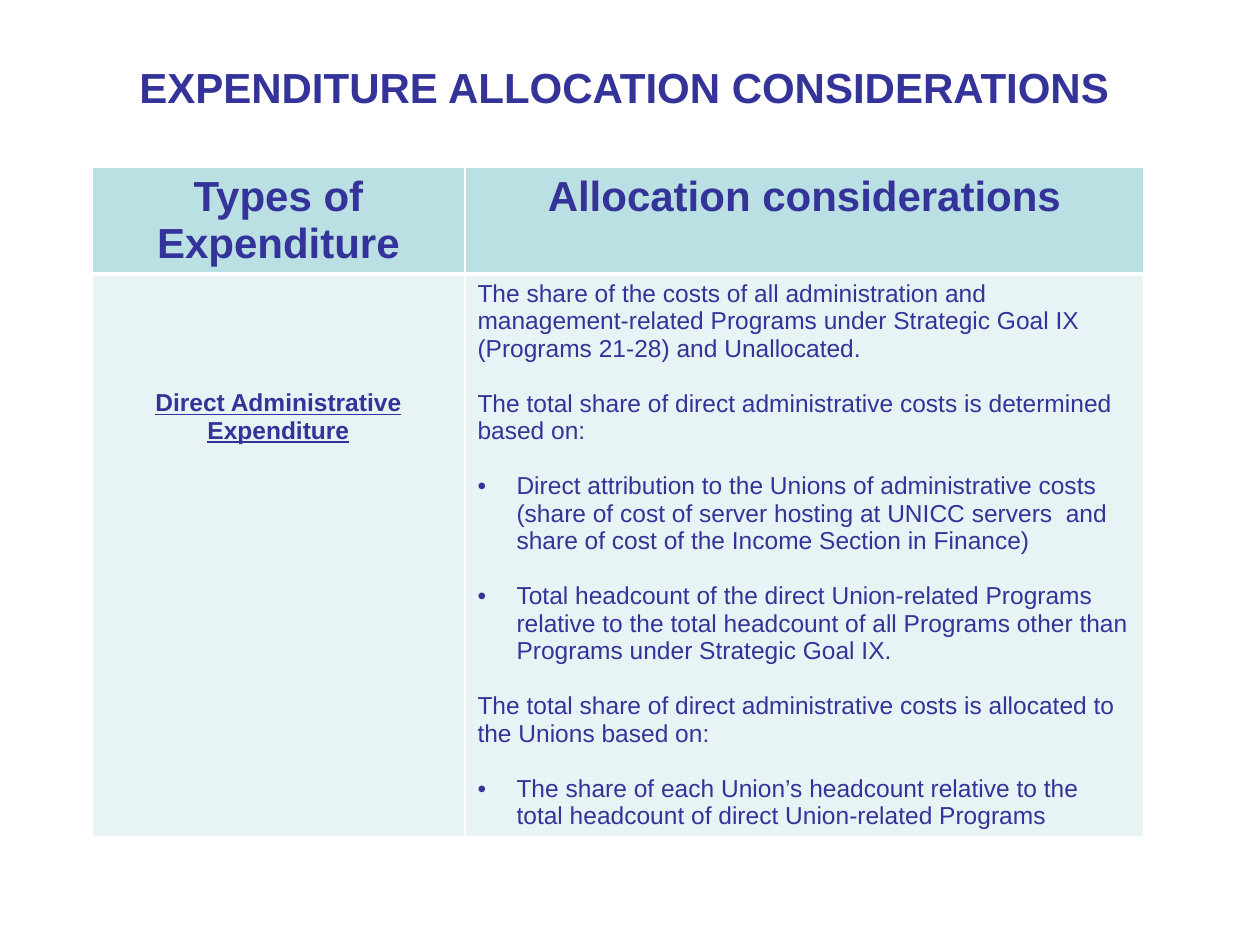
from lxml.etree import SubElement
from pptx import Presentation
from pptx.dml.color import RGBColor
from pptx.enum.text import MSO_ANCHOR, PP_ALIGN
from pptx.oxml.ns import qn
from pptx.util import Inches, Pt

INDIGO = RGBColor(0x33, 0x33, 0x99)
HEADER_TEAL = RGBColor(0xBB, 0xE0, 0xE3)
BODY_TEAL = RGBColor(0xE7, 0xF3, 0xF4)
WHITE = RGBColor(0xFF, 0xFF, 0xFF)

FONT = "Arial"
HEADING_SIZE = 24
BODY_SIZE = 14
BLANK_LINE = 15.64  # points, one line of body text
HANGING_INDENT = Inches(0.31)

HEADINGS = ["Types of Expenditure", "Allocation considerations"]
EXPENDITURE_TYPE = "Direct Administrative Expenditure"
# Each entry is (text, is_bullet).
CONSIDERATIONS = [
    ("The share of the costs of all administration and management-related Programs "
     "under Strategic Goal IX (Programs 21-28) and Unallocated.", False),
    ("The total share of direct administrative costs is determined based on:", False),
    ("Direct attribution to the Unions of administrative costs (share of cost of server "
     "hosting at UNICC servers  and share of cost of the Income Section in Finance)", True),
    ("Total headcount of the direct Union-related Programs relative to the total "
     "headcount of all Programs other than Programs under Strategic Goal IX.", True),
    ("The total share of direct administrative costs is allocated to the Unions "
     "based on:", False),
    ("The share of each Union’s headcount relative to the total headcount of direct "
     "Union-related Programs", True),
]


class AllocationSlide:
    def __init__(self, deck):
        self.page = deck.slides.add_slide(deck.slide_layouts[5])

    def style(self, para, size, bold=False, underline=False, align=PP_ALIGN.LEFT):
        para.alignment = align
        font = para.font
        font.name, font.size = FONT, Pt(size)
        font.bold, font.underline = bold, underline
        font.color.rgb = INDIGO

    def title(self, text, left, top, width, height):
        box = self.page.shapes.title
        box.left, box.top = Inches(left), Inches(top)
        box.width, box.height = Inches(width), Inches(height)
        frame = box.text_frame
        frame.text = text
        frame.vertical_anchor = MSO_ANCHOR.MIDDLE
        self.style(frame.paragraphs[0], HEADING_SIZE, bold=True, align=PP_ALIGN.CENTER)

    def table(self, left, top, widths, heights):
        table = self.page.shapes.add_table(
            len(heights), len(widths), Inches(left), Inches(top),
            Inches(sum(widths)), Inches(sum(heights))).table
        for column, width in zip(table.columns, widths):
            column.width = Inches(width)
        for row, height in zip(table.rows, heights):
            row.height = Inches(height)
        return table

    def cell(self, cell, fill, top_line=1, bottom_line=1):
        """Fill the cell and give it white borders, widths in points."""
        properties = cell._tc.get_or_add_tcPr()
        for side, width in (("L", 1), ("R", 1), ("T", top_line), ("B", bottom_line)):
            line = SubElement(properties, qn(f"a:ln{side}"), w=str(Pt(width)))
            solid = SubElement(line, qn("a:solidFill"))
            SubElement(solid, qn("a:srgbClr"), val=str(WHITE))
        cell.fill.solid()
        cell.fill.fore_color.rgb = fill

    def bullet(self, para):
        properties = para._p.get_or_add_pPr()
        properties.set("marL", str(HANGING_INDENT))
        properties.set("indent", str(-HANGING_INDENT))
        SubElement(properties, qn("a:buFont"), typeface=FONT)
        SubElement(properties, qn("a:buChar"), char="•")

    def considerations(self, frame, entries):
        for index, (text, is_bullet) in enumerate(entries):
            para = frame.add_paragraph() if index else frame.paragraphs[0]
            para.text = text
            if is_bullet:
                self.bullet(para)
            if index:
                para.space_before = Pt(BLANK_LINE)
            self.style(para, BODY_SIZE)


def main():
    deck = Presentation()
    deck.slide_width, deck.slide_height = Inches(10), Inches(7.5)
    slide = AllocationSlide(deck)
    slide.title("EXPENDITURE ALLOCATION CONSIDERATIONS", 0.8, 0.44, 8.31, 0.5)

    table = slide.table(0.73, 1.33, widths=[2.96, 5.39], heights=[0.84, 4.46])
    for column, heading in enumerate(HEADINGS):
        header = table.cell(0, column)
        header.text = heading
        slide.cell(header, HEADER_TEAL, bottom_line=3)
        slide.style(header.text_frame.paragraphs[0], HEADING_SIZE, bold=True,
                    align=PP_ALIGN.CENTER)
        slide.cell(table.cell(1, column), BODY_TEAL, top_line=3)

    type_cell, considerations_cell = table.cell(1, 0), table.cell(1, 1)
    type_cell.text = EXPENDITURE_TYPE
    # Level with the second paragraph of the considerations, four lines down.
    type_cell.margin_top = Inches(0.05) + Pt(4 * BLANK_LINE)
    slide.style(type_cell.text_frame.paragraphs[0], BODY_SIZE, bold=True,
                underline=True, align=PP_ALIGN.CENTER)
    slide.considerations(considerations_cell.text_frame, CONSIDERATIONS)

    deck.save("out.pptx")


if __name__ == "__main__":
    main()
